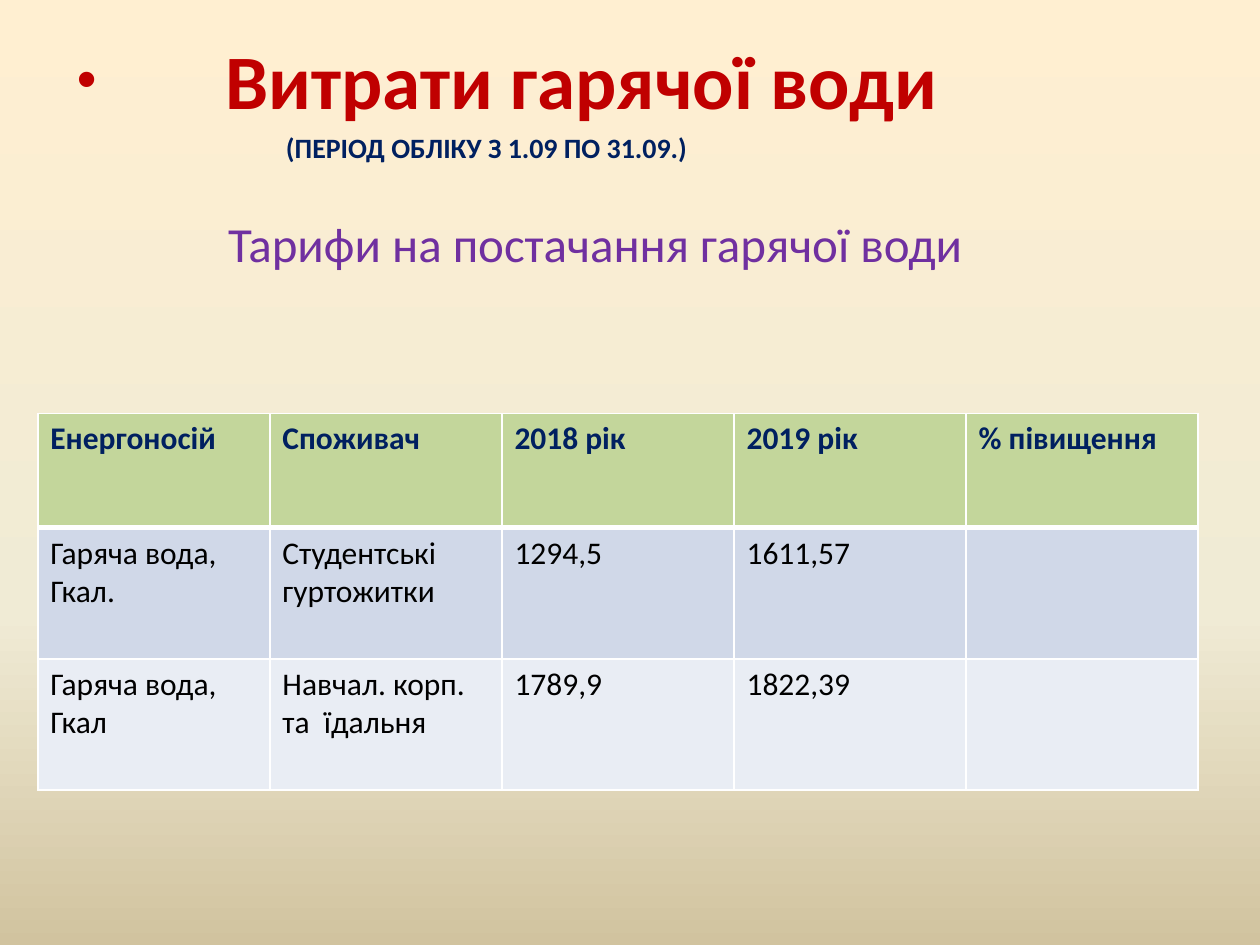
from copy import deepcopy

from pptx import Presentation
from pptx.dml.color import RGBColor
from pptx.enum.text import MSO_AUTO_SIZE as AutoSize
from pptx.oxml import parse_xml
from pptx.oxml.ns import nsdecls
from pptx.util import Inches, Pt

FONT = "Calibri"
NAVY, RED, PURPLE, BLACK, WHITE = "002060", "C00000", "7030A0", "000000", "FFFFFF"
BACKDROP = [(0, "FFEFD1"), (0.65, "F0EBD5"), (1, "D1C39F")]
ROW_FILLS = ["C3D69B", "D0D8E8", "E9EDF4"]
ROW_SHARES = [0.304, 0.348, 0.348]
TARIFFS = [
    ["Енергоносій", "Споживач", "2018 рік", "2019 рік", "% півищення"],
    ["Гаряча вода,\nГкал.", "Студентські гуртожитки", "1294,5", "1611,57", ""],
    ["Гаряча вода,\nГкал", "Навчал. корп.\nта  їдальня", "1789,9", "1822,39", ""],
]


def color(value):
    return RGBColor.from_string(value)


def add_span(para, text, size, tint, bold=False):
    span = para.add_run()
    span.text = text
    font = span.font
    font.name, font.size, font.bold = FONT, Pt(size), bold
    font.color.rgb = color(tint)


def set_background(page):
    fill = page.background.fill
    fill.gradient()
    fill.gradient_angle = 270
    stop_list = page.element.xpath(".//a:gsLst")[0]
    stop_list.insert(1, deepcopy(stop_list[0]))
    for stop, (position, tint) in zip(fill.gradient_stops, BACKDROP):
        stop.position = position
        stop.color.rgb = color(tint)


def set_indent(para, margin, bullet=None):
    """Set the left margin in inches; a bullet hangs at the box edge."""
    props = para._p.get_or_add_pPr()
    props.set("marL", str(Inches(margin)))
    props.set("indent", str(-Inches(margin) if bullet else 0))
    if bullet:
        props.append(parse_xml(f'<a:buSzPct {nsdecls("a")} val="73000"/>'))
        props.append(parse_xml(f'<a:buChar {nsdecls("a")} char="{bullet}"/>'))
    else:
        props.append(parse_xml(f'<a:buNone {nsdecls("a")}/>'))


def fill_heading(holder, left, top, width, height):
    holder.left, holder.top = Inches(left), Inches(top)
    holder.width, holder.height = Inches(width), Inches(height)
    frame = holder.text_frame
    frame.auto_size = AutoSize.NONE

    heading = frame.paragraphs[0]
    set_indent(heading, 1.18, "•")
    add_span(heading, "Витрати гарячої води", 44, RED, True)

    period = frame.add_paragraph()
    set_indent(period, 1.66)
    add_span(period, "(ПЕРІОД ОБЛІКУ З 1.09 ПО 31.09.)", 16, NAVY, True)

    subject = frame.add_paragraph()
    subject.space_before = Pt(28)
    set_indent(subject, 1.2)
    add_span(subject, "Тарифи на постачання гарячої води", 28, PURPLE)


def set_borders(cell, bottom):
    props = cell._tc.get_or_add_tcPr()
    sides = {"lnL": 1, "lnR": 1, "lnT": 1, "lnB": bottom}
    for index, (side, weight) in enumerate(sides.items()):
        props.insert(index, parse_xml(
            f'<a:{side} {nsdecls("a")} w="{Pt(weight)}"><a:solidFill>'
            f'<a:srgbClr val="{WHITE}"/></a:solidFill></a:{side}>'))


def fill_cell(cell, text, fill, header):
    cell.fill.solid()
    cell.fill.fore_color.rgb = color(fill)
    set_borders(cell, 3 if header else 1)
    frame = cell.text_frame
    for index, line in enumerate(text.split("\n") if text else []):
        para = frame.add_paragraph() if index else frame.paragraphs[0]
        add_span(para, line, 18, NAVY if header else BLACK, header)


def add_tariff_table(page, left, top, width, height):
    columns = len(TARIFFS[0])
    table = page.shapes.add_table(
        len(TARIFFS), columns, Inches(left), Inches(top),
        Inches(width), Inches(height)).table
    for column in table.columns:
        column.width = Inches(width / columns)
    for r, texts in enumerate(TARIFFS):
        table.rows[r].height = Inches(height * ROW_SHARES[r])
        for c, text in enumerate(texts):
            fill_cell(table.cell(r, c), text, ROW_FILLS[r], r == 0)


def main():
    deck = Presentation()
    deck.slide_width, deck.slide_height = Inches(10), Inches(7.5)
    page = deck.slides.add_slide(deck.slide_layouts.get_by_name("Title and Content"))
    title = page.shapes.title.element
    title.getparent().remove(title)
    set_background(page)
    fill_heading(page.placeholders[1], 0.51, 0.21, 9, 2.13)
    add_tariff_table(page, 0.3, 3.28, 9.21, 2.99)
    deck.save("out.pptx")


if __name__ == "__main__":
    main()
